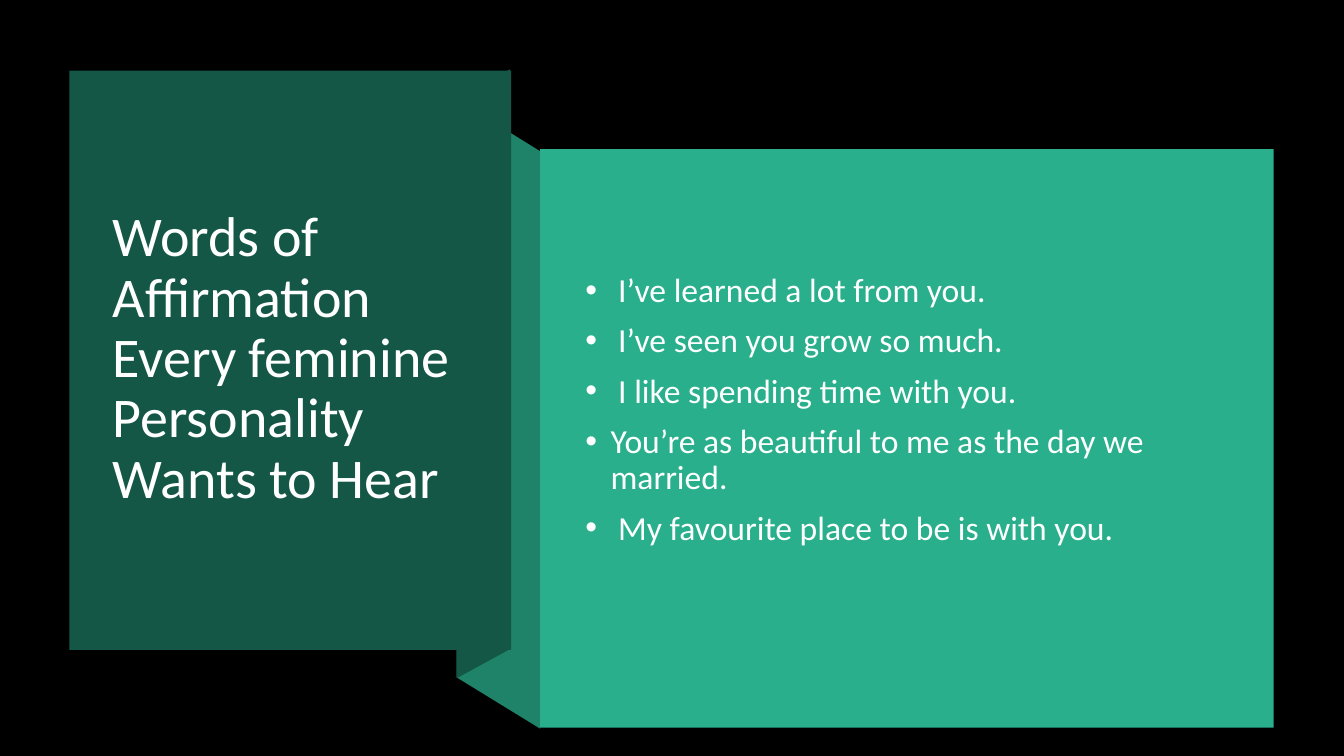
from dataclasses import dataclass

from lxml import etree
from pptx import Presentation
from pptx.dml.color import RGBColor
from pptx.enum.shapes import MSO_SHAPE
from pptx.enum.text import MSO_ANCHOR, MSO_AUTO_SIZE, PP_ALIGN
from pptx.oxml.ns import qn
from pptx.util import Cm, Pt

RECTANGLE = MSO_SHAPE.RECTANGLE
MIDDLE = MSO_ANCHOR.MIDDLE
NO_AUTOFIT = MSO_AUTO_SIZE.NONE
LEFT = PP_ALIGN.LEFT
TITLE_ONLY = 5


@dataclass(frozen=True)
class Theme:
    background: str = "000000"
    ribbon: str = "1F8369"
    panel: str = "155746"
    card: str = "29AF8C"
    title_text: str = "FFFFFF"
    body_text: str = "FEFFFF"
    font: str = "Calibri"
    title_size: int = 40
    body_size: int = 24
    line_spacing: float = 0.9
    space_before: int = 10
    bullet_indent: float = 0.64


@dataclass(frozen=True)
class Area:
    left: float
    top: float
    width: float
    height: float


@dataclass(frozen=True)
class Fold:
    left: float
    right: float
    left_top: float
    right_top: float
    left_bottom: float
    right_bottom: float
    color: str


@dataclass(frozen=True)
class Block:
    area: Area
    color: str


THEME = Theme()
FOLDS = [
    Fold(11.51, 13.61, 2.51, 3.81, 17.07, 18.36, THEME.ribbon),
    Fold(11.51, 12.85, 2.49, 1.75, 17.09, 16.36, THEME.panel),
]
BLOCKS = [
    Block(Area(1.75, 1.78, 11.13, 14.6), THEME.panel),
    Block(Area(13.61, 3.76, 18.49, 14.58), THEME.card),
]
TITLE_AREA = Area(2.59, 2.72, 9.42, 12.67)
BODY_AREA = Area(14.5, 4.78, 16.54, 11.13)
TITLE = "Words of Affirmation Every feminine Personality Wants to Hear"
AFFIRMATIONS = [
    " I’ve learned a lot from you.",
    " I’ve seen you grow so much.",
    " I like spending time with you.",
    "You’re as beautiful to me as the day we married.",
    " My favourite place to be is with you.",
]


def apply(target, values: dict) -> None:
    for name, value in values.items():
        setattr(target, name, value)


def paint(shape, color: str) -> None:
    shape.shadow.inherit = False
    shape.fill.solid()
    shape.fill.fore_color.rgb = RGBColor.from_string(color)
    shape.line.fill.background()


def draw_fold(page, fold: Fold) -> None:
    builder = page.shapes.build_freeform(Cm(fold.right), Cm(fold.right_bottom))
    corners = [
        (fold.left, fold.left_bottom),
        (fold.left, fold.left_top),
        (fold.right, fold.right_top),
    ]
    builder.add_line_segments([(Cm(x), Cm(y)) for x, y in corners], close=True)
    paint(builder.convert_to_shape(), fold.color)


def draw_block(page, block: Block) -> None:
    area = block.area
    shape = page.shapes.add_shape(
        RECTANGLE, Cm(area.left), Cm(area.top), Cm(area.width), Cm(area.height)
    )
    paint(shape, block.color)


def place_text(box, area: Area) -> None:
    apply(box, {
        "left": Cm(area.left), "top": Cm(area.top),
        "width": Cm(area.width), "height": Cm(area.height),
    })
    apply(box.text_frame, {
        "word_wrap": True, "auto_size": NO_AUTOFIT, "vertical_anchor": MIDDLE,
    })


def format_para(para, size: int, color: str, space_before: int) -> None:
    apply(para, {
        "alignment": LEFT, "line_spacing": THEME.line_spacing,
        "space_before": Pt(space_before),
    })
    for span in para.runs:
        apply(span.font, {"name": THEME.font, "size": Pt(size)})
        span.font.color.rgb = RGBColor.from_string(color)


def add_bullet(para) -> None:
    properties = para._p.get_or_add_pPr()
    indent = Cm(THEME.bullet_indent)
    properties.set("marL", str(indent))
    properties.set("indent", str(-indent))
    etree.SubElement(properties, qn("a:buFont")).set("typeface", "Arial")
    etree.SubElement(properties, qn("a:buChar")).set("char", "•")


def write_title(page) -> None:
    title = page.shapes.title
    page.shapes._spTree.append(title._element)
    place_text(title, TITLE_AREA)
    title.text_frame.text = TITLE
    format_para(title.text_frame.paragraphs[0], THEME.title_size, THEME.title_text, 0)


def write_affirmations(page) -> None:
    box = page.shapes.add_textbox(0, 0, 0, 0)
    place_text(box, BODY_AREA)
    box.text_frame.text = "\n".join(AFFIRMATIONS)
    for index, para in enumerate(box.text_frame.paragraphs):
        add_bullet(para)
        space = THEME.space_before if index else 0
        format_para(para, THEME.body_size, THEME.body_text, space)


def main() -> None:
    deck = Presentation()
    apply(deck, {"slide_width": Cm(33.87), "slide_height": Cm(19.05)})
    page = deck.slides.add_slide(deck.slide_layouts[TITLE_ONLY])
    page.background.fill.solid()
    page.background.fill.fore_color.rgb = RGBColor.from_string(THEME.background)
    for fold in FOLDS:
        draw_fold(page, fold)
    for block in BLOCKS:
        draw_block(page, block)
    write_title(page)
    write_affirmations(page)
    deck.save("out.pptx")


if __name__ == "__main__":
    main()
